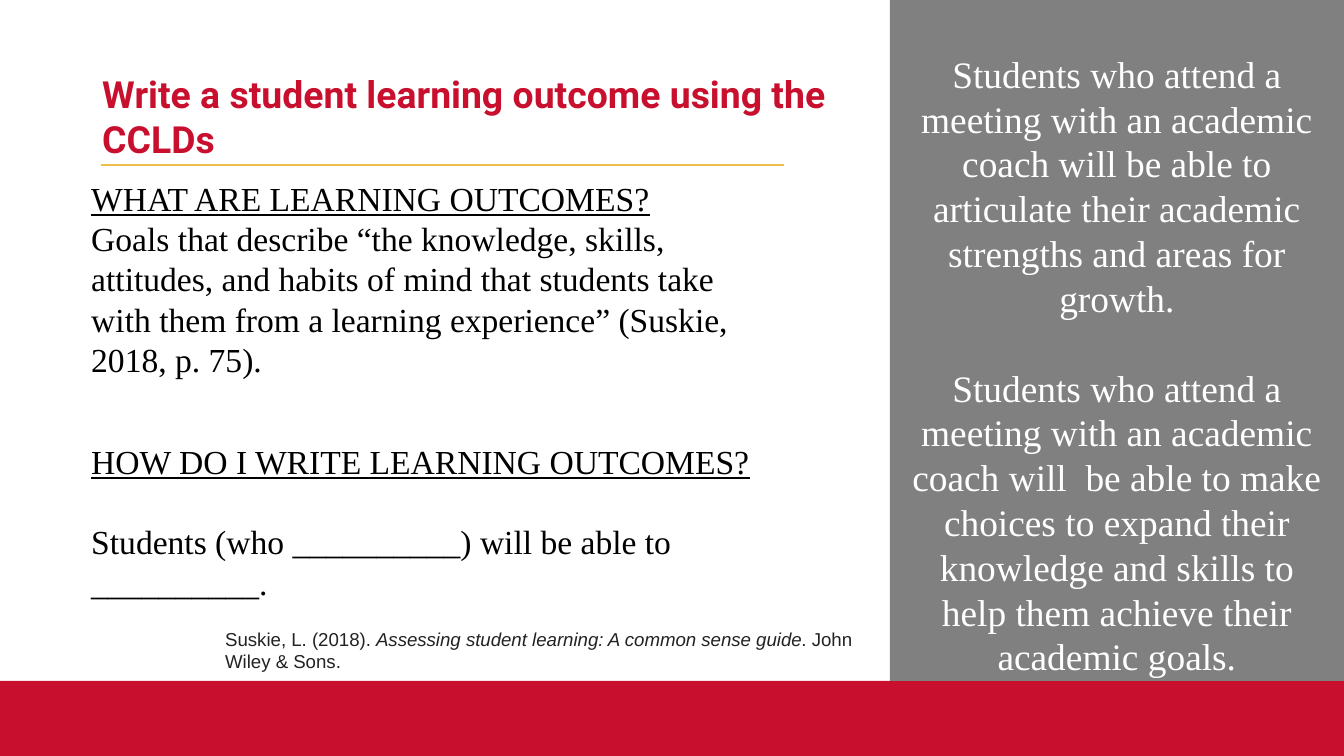
import pptx
import pptx.util
import pptx.dml.color
import pptx.enum.shapes
import pptx.enum.text
import lxml.etree

EMU_PER_PX = 914400 / 134.4
SERIF = "Times New Roman"
COLORS = {
    "red": "C8102E",
    "gold": "F1BE48",
    "gray": "808080",
    "white": "FFFFFF",
    "black": "000000",
    "note": "222222",
}


def px(n):
    return pptx.util.Emu(round(n * EMU_PER_PX))


def rgb(name):
    return pptx.dml.color.RGBColor.from_string(COLORS[name])


class Deck:
    """Style and current slide; one method for each kind of element."""

    def __init__(self, width, height):
        self.prs = pptx.Presentation()
        self.prs.slide_width, self.prs.slide_height = px(width), px(height)
        self.s = self.prs.slides.add_slide(self.prs.slide_layouts[6])

    def rect(self, x, y, w, h, color):
        kind = pptx.enum.shapes.MSO_SHAPE.RECTANGLE
        sp = self.s.shapes.add_shape(kind, px(x), px(y), px(w), px(h))
        sp.shadow.inherit = False
        sp.fill.solid()
        sp.fill.fore_color.rgb = rgb(color)
        sp.line.fill.background()
        return sp

    def rule(self, x1, x2, y, color):
        kind = pptx.enum.shapes.MSO_CONNECTOR.STRAIGHT
        line = self.s.shapes.add_connector(kind, px(x1), px(y), px(x2), px(y))
        line.line.color.rgb = rgb(color)
        line.line.width = pptx.util.Pt(1)
        ns = line._element.nsmap["a"]
        lxml.etree.SubElement(line._element.spPr, "{%s}effectLst" % ns)

    def text(self, x, y, w, h, paragraphs, **style):
        sp = self.s.shapes.add_textbox(px(x), px(y), px(w), px(h))
        self.fill_text(sp, paragraphs, **style)
        return sp.text_frame

    def fill_text(self, sp, paragraphs, size, font, color,
                  bold=False, gap=0, align="LEFT"):
        tf = sp.text_frame
        tf.word_wrap = True
        tf.vertical_anchor = pptx.enum.text.MSO_ANCHOR.TOP
        tf.text = "\n".join(paragraphs)
        for i, p in enumerate(tf.paragraphs):
            p.alignment = getattr(pptx.enum.text.PP_ALIGN, align)
            p.line_spacing = pptx.util.Pt(1.2 * size)
            p.space_before = pptx.util.Pt(gap if i else 0)
            for r in p.runs:
                self.style_run(r, size, font, color, bold)

    def style_run(self, r, size, font, color, bold=False):
        r.font.size = pptx.util.Pt(size)
        r.font.name = font
        r.font.bold = bold
        r.font.color.rgb = rgb(color)

    def headed_text(self, x, y, w, h, heading, body, gap=0):
        tf = self.text(x, y, w, h, [heading, body], size=18, font=SERIF,
                       color="black", gap=gap)
        tf.paragraphs[0].runs[0].font.underline = True

    def citation(self, x, y, w, h, parts):
        tf = self.text(x, y, w, h, [parts[0]], size=10, font="Arial",
                       color="note")
        p = tf.paragraphs[0]
        for part, italic in zip(parts[1:], (True, False)):
            r = p.add_run()
            r.text = part
            self.style_run(r, 10, "Arial", "note")
            r.font.italic = italic

    def panel(self, x, y, w, h, color, paragraphs, top):
        sp = self.rect(x, y, w, h, color)
        sp.text_frame.margin_top = px(top)
        sp.text_frame.margin_bottom = 0
        self.fill_text(sp, paragraphs, size=20, font=SERIF, color="white",
                       gap=24, align="CENTER")


def main():
    deck = Deck(1344, 756)

    # Footer band
    deck.rect(0, 681, 1344, 75, "red")

    # Title and rule
    deck.text(89, 65, 801, 103,
              ["Write a student learning outcome using the CCLDs"],
              size=20, font="Roboto", color="red", bold=True)
    deck.rule(101, 784, 165, "gold")

    # Example outcomes
    deck.panel(890, 0, 454, 681, "gray", [
        "Students who attend a meeting with an academic coach will be able to "
        "articulate their academic strengths and areas for growth.",
        "Students who attend a meeting with an academic coach will  be able to "
        "make choices to expand their knowledge and skills to help them "
        "achieve their academic goals.",
    ], top=51)

    # Definition and sentence pattern
    deck.headed_text(
        78, 171, 680, 218, "WHAT ARE LEARNING OUTCOMES?",
        "Goals that describe “the knowledge, skills, attitudes, and habits of "
        "mind that students take with them from a learning experience” "
        "(Suskie, 2018, p. 75).")
    deck.headed_text(
        78, 434, 695, 176, "HOW DO I WRITE LEARNING OUTCOMES?",
        "Students (who __________) will be able to __________.", gap=21.6)

    # Reference
    deck.citation(212, 621, 681, 59, [
        "Suskie, L. (2018). ",
        "Assessing student learning: A common sense guide",
        ". John Wiley & Sons.",
    ])

    deck.prs.save("out.pptx")


if __name__ == "__main__":
    main()
